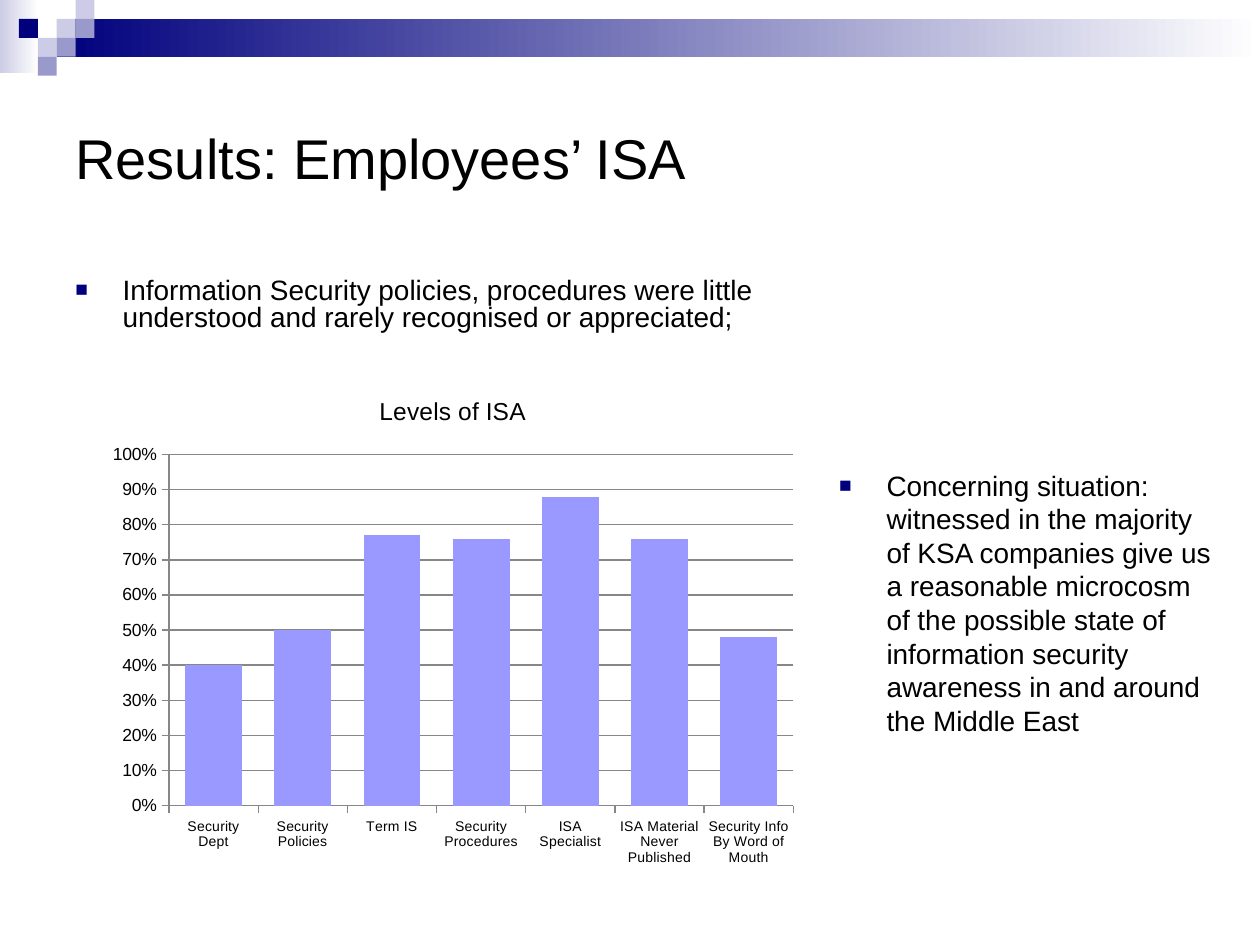
from lxml import etree
from pptx import Presentation
from pptx.chart.data import CategoryChartData
from pptx.dml.color import RGBColor
from pptx.enum import chart as ch, shapes, text
from pptx.oxml import parse_xml
from pptx.oxml.ns import nsdecls, qn
from pptx.util import Pt

FONT, BLACK, NAVY = "Arial", "000000", "00007D"
PALE, MID, WHITE = "CCCCE6", "9999CC", "FFFFFF"
CELL = 10.8
# column, row and colour on the grid of small squares
CELLS = [(3, 1, PALE), (4, 0, PALE), (4, 1, MID), (2, 2, PALE),
         (1, 1, NAVY), (3, 2, MID), (2, 3, MID)]
LEVELS = {"Security Dept": 0.4, "Security Policies": 0.5, "Term IS": 0.77,
          "Security Procedures": 0.76, "ISA Specialist": 0.88,
          "ISA Material Never Published": 0.76,
          "Security Info By Word of Mouth": 0.48}


def color(code):
    return RGBColor.from_string(code)


def style(font, size):
    font.name, font.size, font.bold = FONT, Pt(size), False
    font.color.rgb = color(BLACK)


def add_rect(slide, box, *codes):
    """Draw a plain rectangle; two colours make a left-to-right gradient."""
    rect = slide.shapes.add_shape(shapes.MSO_SHAPE.RECTANGLE, *map(Pt, box))
    rect.shadow.inherit = False
    rect.line.fill.background()
    if len(codes) == 1:
        rect.fill.solid()
        rect.fill.fore_color.rgb = color(codes[0])
        return
    rect.fill.gradient()
    rect.fill.gradient_angle = 0
    for stop, code, pos in zip(rect.fill.gradient_stops, codes, (0, 1)):
        stop.color.rgb, stop.position = color(code), pos


def add_text(slide, box, words, size):
    frame = slide.shapes.add_textbox(*map(Pt, box)).text_frame
    frame.word_wrap = True
    para = frame.paragraphs[0]
    run = para.add_run()
    run.text = words
    style(run.font, size)
    return frame, para


def add_point(slide, box, words, lead=1.0):
    """Add a bulleted paragraph with the given line spacing."""
    para = add_text(slide, box, words, 16)[1]
    para.line_spacing, para.space_before = lead, Pt(3.2)
    props = para._p.get_or_add_pPr()
    props.set("marL", str(Pt(27)))
    props.set("indent", str(Pt(-27)))
    tint = etree.SubElement(props, qn("a:buClr"))
    etree.SubElement(tint, qn("a:srgbClr"), val=NAVY)
    etree.SubElement(props, qn("a:buSzPct"), val="75000")
    etree.SubElement(props, qn("a:buFont"), typeface=FONT)
    etree.SubElement(props, qn("a:buChar"), char="■")


def set_plot(chart, x, y, w, h):
    """Fix the inner plot area, in shares of the chart."""
    area = chart._chartSpace.chart.plotArea
    for old in area.findall(qn("c:layout")):
        area.remove(old)
    parts = "".join(f'<c:{k} val="{v}"/>' for k, v in
                    zip("xywh", (x, y, w, h)))
    area.insert(0, parse_xml(
        f'<c:layout {nsdecls("c")}><c:manualLayout>'
        '<c:layoutTarget val="inner"/><c:xMode val="edge"/>'
        f'<c:yMode val="edge"/>{parts}</c:manualLayout></c:layout>'))


def add_bars(slide, box):
    data = CategoryChartData(number_format="0%")
    data.categories = list(LEVELS)
    data.add_series("Series 1", list(LEVELS.values()))
    chart = slide.shapes.add_chart(ch.XL_CHART_TYPE.COLUMN_CLUSTERED,
                                   *map(Pt, box), data).chart
    style(chart.font, 10)
    chart.has_legend = False
    chart.has_title = True
    run = chart.chart_title.text_frame.paragraphs[0].add_run()
    run.text = "Levels of ISA"
    style(run.font, 14)
    plot = chart.plots[0]
    plot.gap_width, plot.vary_by_categories = 57, False
    bars = plot.series[0].format.fill
    bars.solid()
    bars.fore_color.rgb = color("9999FF")
    cats, vals = chart.category_axis, chart.value_axis
    for axis, size in ((cats, 8), (vals, 10)):
        style(axis.tick_labels.font, size)
        axis.major_tick_mark = ch.XL_TICK_MARK.OUTSIDE
        axis.format.line.color.rgb = color("878787")
    vals.minimum_scale, vals.maximum_scale, vals.major_unit = 0, 1, 0.1
    vals.tick_labels.number_format = "0%"
    vals.tick_labels.number_format_is_linked = False
    vals.has_major_gridlines = True
    vals.major_gridlines.format.line.color.rgb = color("878787")
    set_plot(chart, 0.1, 0.16, 0.88, 0.7)


def main():
    deck = Presentation()
    deck.slide_width, deck.slide_height = Pt(720), Pt(540)
    slide = deck.slides.add_slide(deck.slide_layouts[6])
    add_rect(slide, (0, 0, 22, 42), PALE, WHITE)
    add_rect(slide, (32.4, CELL, 687.6, 2 * CELL), NAVY, WHITE)
    for col, row, code in CELLS:
        add_rect(slide, (col * CELL, row * CELL, CELL, CELL), code)
    frame = add_text(slide, (36, 36, 648, 108),
                     "Results: Employees’ ISA", 32)[0]
    frame.vertical_anchor = text.MSO_ANCHOR.MIDDLE
    add_point(slide, (36, 156, 448.5, 363.5),
              "Information Security policies, procedures were little "
              "understood and rarely recognised or appreciated;", 0.8)
    add_point(slide, (472.5, 264, 230.5, 157.5),
              "Concerning situation: witnessed in the majority of KSA "
              "companies give us a reasonable microcosm of the possible "
              "state of information security awareness in and around "
              "the Middle East")
    add_bars(slide, (56, 214, 405.5, 286.5))
    deck.save("out.pptx")


if __name__ == "__main__":
    main()
